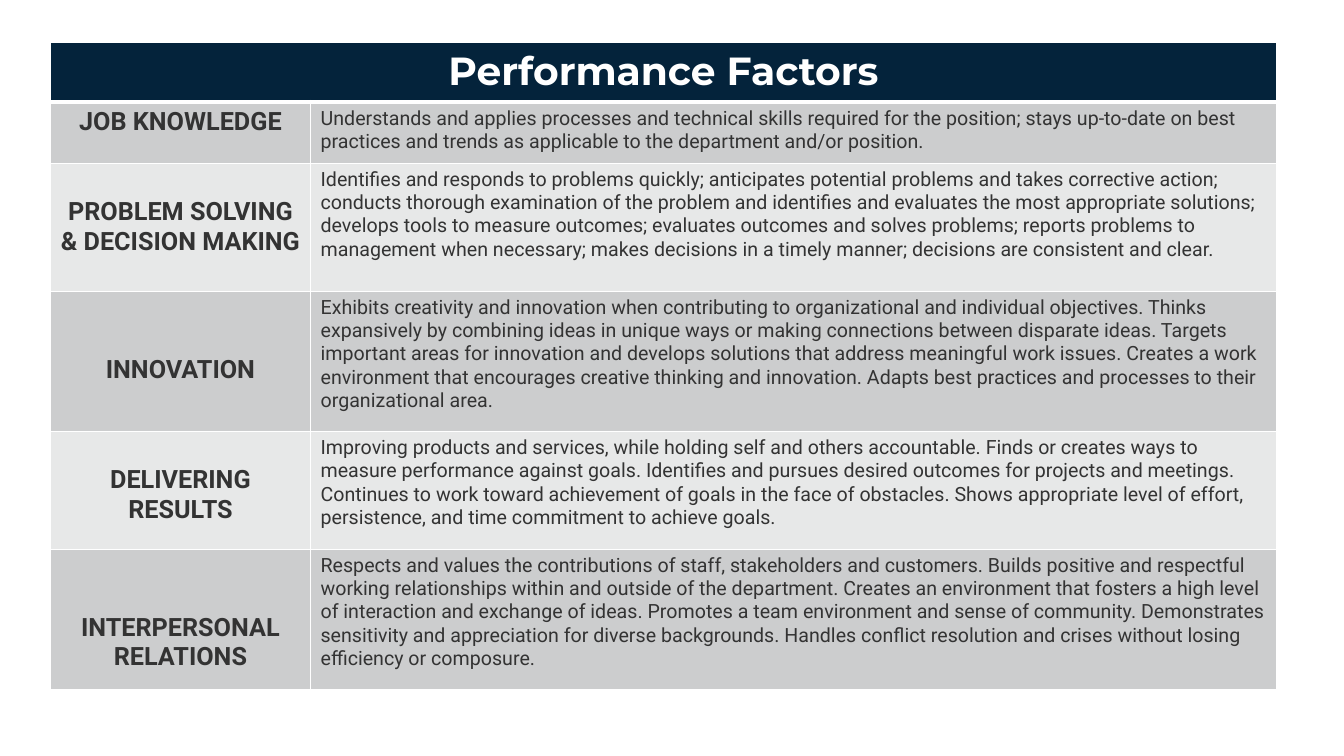
from dataclasses import dataclass

from lxml.etree import SubElement
from pptx import Presentation
from pptx.dml.color import RGBColor
from pptx.enum.text import PP_ALIGN as Align
from pptx.oxml.ns import qn
from pptx.table import Table, _Cell as Cell
from pptx.util import Inches, Pt


@dataclass(frozen=True)
class Theme:
    navy: str = "04233B"
    white: str = "FFFFFF"
    ink: str = "333333"
    bands: tuple[str, str] = ("CCCDCE", "E7E8E8")
    title_font: str = "Montserrat"
    body_font: str = "Roboto"
    title_size: int = 28
    factor_size: int = 18
    body_size: int = 14
    rule: float = 1
    header_rule: float = 3


@dataclass(frozen=True)
class TextStyle:
    font: str
    size: int
    color: str
    bold: bool = False
    align: Align = Align.LEFT


@dataclass(frozen=True)
class Factor:
    """A table row; drop is how many text lines its name sits below the top."""
    name: str
    description: str
    height: float
    drop: int


THEME = Theme()
TITLE = TextStyle(THEME.title_font, THEME.title_size, THEME.white, True, Align.CENTER)
NAME = TextStyle(THEME.body_font, THEME.factor_size, THEME.ink, True, Align.CENTER)
BODY = TextStyle(THEME.body_font, THEME.body_size, THEME.ink)

COLUMN_WIDTHS = (2.58, 9.58)
HEADER_HEIGHT = 0.59
CELL_MARGIN = 0.05
NAME_LINE = 0.29

FACTORS = (
    Factor(
        "JOB KNOWLEDGE",
        "Understands and applies processes and technical skills required for the position; "
        "stays up-to-date on best practices and trends as applicable to the department "
        "and/or position.",
        0.61, 0),
    Factor(
        "PROBLEM SOLVING & DECISION MAKING",
        "Identifies and responds to problems quickly; anticipates potential problems and takes "
        "corrective action; conducts thorough examination of the problem and identifies and "
        "evaluates the most appropriate solutions; develops tools to measure outcomes; "
        "evaluates outcomes and solves problems; reports problems to management when "
        "necessary; makes decisions in a timely manner; decisions are consistent and clear.",
        1.27, 1),
    Factor(
        "INNOVATION",
        "Exhibits creativity and innovation when contributing to organizational and individual "
        "objectives. Thinks expansively by combining ideas in unique ways or making connections "
        "between disparate ideas. Targets important areas for innovation and develops solutions "
        "that address meaningful work issues. Creates a work environment that encourages "
        "creative thinking and innovation. Adapts best practices and processes to their "
        "organizational area.",
        1.39, 2),
    Factor(
        "DELIVERING RESULTS",
        "Improving products and services, while holding self and others accountable. Finds or "
        "creates ways to measure performance against goals. Identifies and pursues desired "
        "outcomes for projects and meetings. Continues to work toward achievement of goals in "
        "the face of obstacles. Shows appropriate level of effort, persistence, and time "
        "commitment to achieve goals.",
        1.17, 1),
    Factor(
        "INTERPERSONAL RELATIONS",
        "Respects and values the contributions of staff, stakeholders and customers. Builds "
        "positive and respectful working relationships within and outside of the department. "
        "Creates an environment that fosters a high level of interaction and exchange of ideas. "
        "Promotes a team environment and sense of community. Demonstrates sensitivity and "
        "appreciation for diverse backgrounds. Handles conflict resolution and crises without "
        "losing efficiency or composure.",
        1.39, 2),
)


def paint_cell(cell: Cell, fill: str, top: float = THEME.rule,
               bottom: float = THEME.rule) -> None:
    """Add white borders, then the fill, in the order the cell properties need."""
    properties = cell._tc.get_or_add_tcPr()
    widths = {"a:lnL": THEME.rule, "a:lnR": THEME.rule, "a:lnT": top, "a:lnB": bottom}
    for tag, width in widths.items():
        line = SubElement(properties, qn(tag), w=str(Pt(width)))
        solid = SubElement(line, qn("a:solidFill"))
        SubElement(solid, qn("a:srgbClr"), val=THEME.white)
    cell.fill.solid()
    cell.fill.fore_color.rgb = RGBColor.from_string(fill)


def write_cell(cell: Cell, text: str, style: TextStyle, drop: int = 0) -> None:
    cell.margin_top = Inches(CELL_MARGIN + drop * NAME_LINE)
    para = cell.text_frame.paragraphs[0]
    para.alignment = style.align
    span = para.add_run()
    span.text = text
    span.font.name = style.font
    span.font.size = Pt(style.size)
    span.font.bold = style.bold
    span.font.color.rgb = RGBColor.from_string(style.color)


def fill_header(table: Table) -> None:
    left, right = table.cell(0, 0), table.cell(0, 1)
    for cell in (left, right):
        paint_cell(cell, THEME.navy, bottom=THEME.header_rule)
    left.merge(right)
    write_cell(left, "Performance Factors", TITLE)


def fill_factor(table: Table, number: int, factor: Factor) -> None:
    table.rows[number].height = Inches(factor.height)
    name, description = table.cell(number, 0), table.cell(number, 1)
    top = THEME.header_rule if number == 1 else THEME.rule
    for cell in (name, description):
        paint_cell(cell, THEME.bands[(number - 1) % 2], top=top)
    write_cell(name, factor.name, NAME, factor.drop)
    write_cell(description, factor.description, BODY)


def main() -> None:
    deck = Presentation()
    deck.slide_width, deck.slide_height = Inches(13.33), Inches(7.5)
    page = deck.slides.add_slide(deck.slide_layouts[6])

    height = HEADER_HEIGHT + sum(factor.height for factor in FACTORS)
    table = page.shapes.add_table(
        len(FACTORS) + 1, len(COLUMN_WIDTHS), Inches(0.5), Inches(0.42),
        Inches(sum(COLUMN_WIDTHS)), Inches(height)).table
    table.horz_banding = False
    for column, width in zip(table.columns, COLUMN_WIDTHS):
        column.width = Inches(width)
    table.rows[0].height = Inches(HEADER_HEIGHT)

    fill_header(table)
    for number, factor in enumerate(FACTORS, start=1):
        fill_factor(table, number, factor)
    deck.save("out.pptx")


if __name__ == "__main__":
    main()
